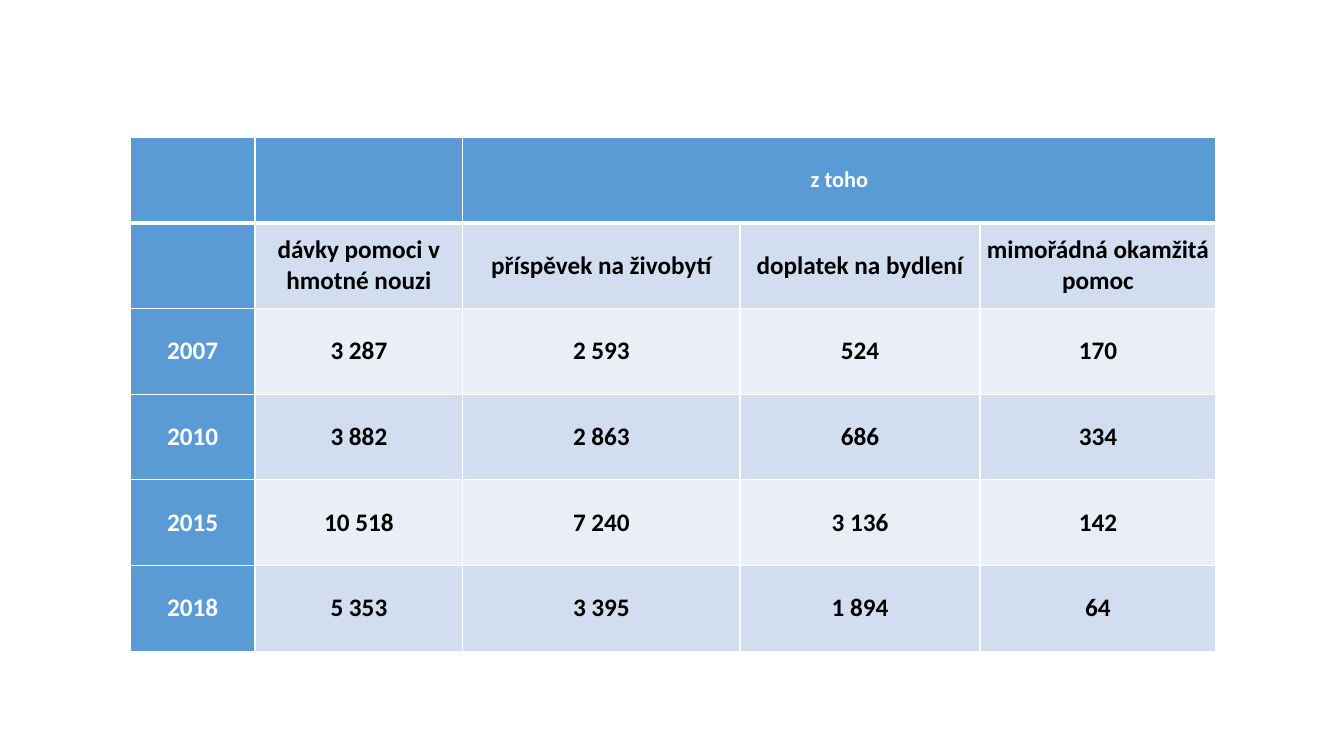
"""Build a slide with a table of material need benefits by year."""
from lxml.etree import SubElement
from pptx import Presentation
from pptx.dml.color import RGBColor
from pptx.enum.text import MSO_ANCHOR as Anchor, PP_ALIGN as Align
from pptx.oxml.ns import qn
from pptx.util import Inches, Pt

WHITE = RGBColor(0xFF, 0xFF, 0xFF)
BLACK = RGBColor(0x00, 0x00, 0x00)
BLUE = RGBColor(0x5B, 0x9B, 0xD5)
BAND_DARK = RGBColor(0xD2, 0xDE, 0xEF)
BAND_LIGHT = RGBColor(0xEA, 0xEF, 0xF7)

FONT = "Calibri"
LEFT, TOP = 1.29, 1.36
COLUMN_WIDTHS = (1.24, 2.06, 2.75, 2.38, 2.34)
ROW_HEIGHT = 0.85
ROWS = (
    ("", "", "z toho", "", ""),
    ("", "dávky pomoci v hmotné nouzi", "příspěvek na živobytí",
     "doplatek na bydlení", "mimořádná okamžitá pomoc"),
    ("2007", "3 287", "2 593", "524", "170"),
    ("2010", "3 882", "2 863", "686", "334"),
    ("2015", "10 518", "7 240", "3 136", "142"),
    ("2018", "5 353", "3 395", "1 894", "64"),
)


def add_border(cell, side, points):
    """Draw one white border of a cell."""
    properties = cell._tc.get_or_add_tcPr()
    line = SubElement(properties, qn(f"a:ln{side}"), w=str(Pt(points)))
    fill = SubElement(line, qn("a:solidFill"))
    SubElement(fill, qn("a:srgbClr"), val=str(WHITE))


def write_text(cell, text, size, color):
    """Write centred bold text into a cell."""
    cell.vertical_anchor = Anchor.MIDDLE
    cell.margin_left = cell.margin_right = Inches(0.05)
    cell.margin_top = cell.margin_bottom = 0
    para = cell.text_frame.paragraphs[0]
    para.text = text
    para.alignment = Align.CENTER
    para.space_before = Pt(6)
    font = para.font if not text else para.runs[0].font
    font.name, font.size, font.bold = FONT, Pt(size), True
    font.color.rgb = color


def style_cell(cell, row, column, text):
    """Give a cell its borders, fill and text by its place in the grid."""
    heading = row == 0 or column == 0
    band = BAND_DARK if row % 2 else BAND_LIGHT
    for side in "LRTB":
        under_header = (row, side) in ((0, "B"), (1, "T"))
        add_border(cell, side, 3 if under_header else 1)
    cell.fill.solid()
    cell.fill.fore_color.rgb = BLUE if heading else band
    write_text(cell, text, 16 if row == 0 else 18, WHITE if heading else BLACK)


def add_benefit_table(page):
    """Add the table and merge the heading over the last three columns."""
    frame = page.shapes.add_table(
        len(ROWS), len(COLUMN_WIDTHS), Inches(LEFT), Inches(TOP),
        Inches(sum(COLUMN_WIDTHS)), Inches(ROW_HEIGHT * len(ROWS)))
    table = frame.table
    for column, width in zip(table.columns, COLUMN_WIDTHS):
        column.width = Inches(width)
    for row, texts in enumerate(ROWS):
        table.rows[row].height = Inches(ROW_HEIGHT)
        for column, text in enumerate(texts):
            style_cell(table.cell(row, column), row, column, text)
    table.cell(0, 2).merge(table.cell(0, 4))


def main():
    """Create the deck and save it."""
    deck = Presentation()
    deck.slide_width, deck.slide_height = Inches(13.33), Inches(7.5)
    page = deck.slides.add_slide(deck.slide_layouts[6])
    add_benefit_table(page)
    deck.save("out.pptx")


if __name__ == "__main__":
    main()
